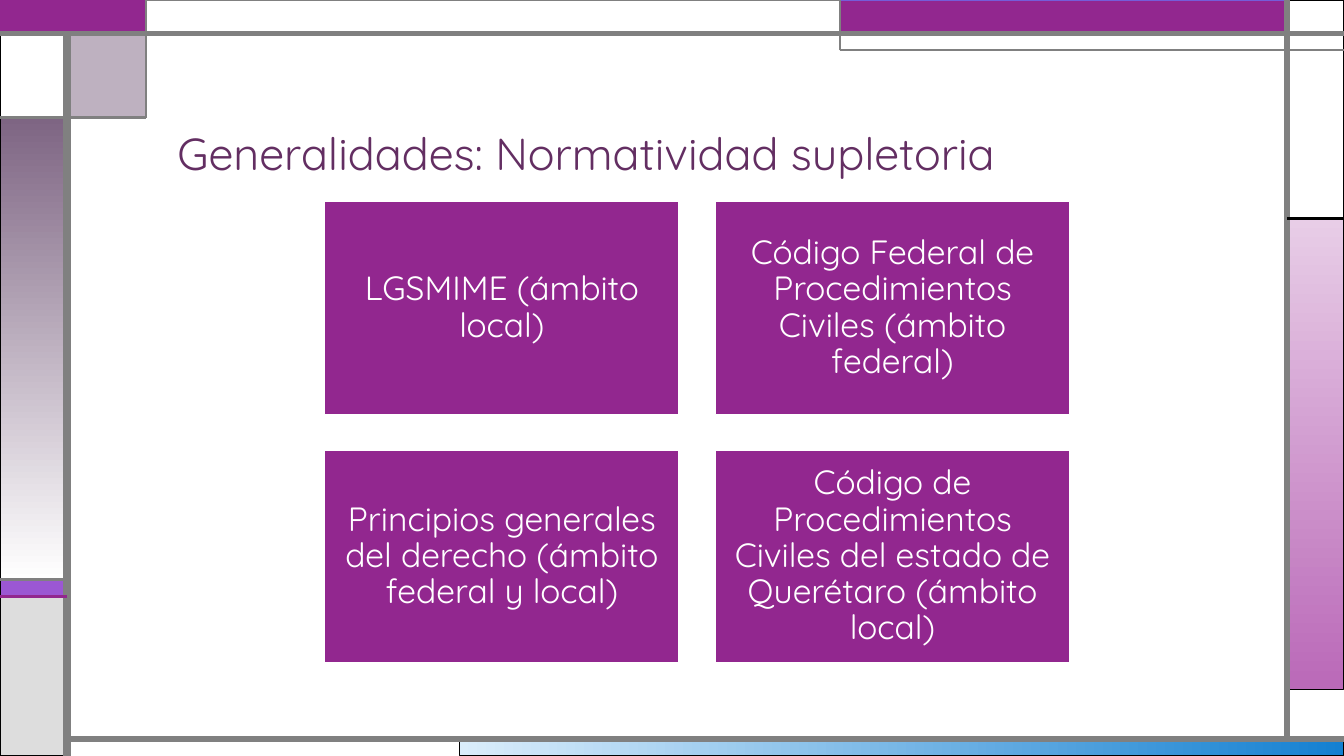
from lxml import etree
from pptx import Presentation
from pptx import util as u
from pptx.dml.color import RGBColor
from pptx.enum import shapes, text
from pptx.oxml.ns import qn

Pt = u.Pt
FONT = "Quicksand"
PURPLE = RGBColor(0x92, 0x27, 0x8F)
DARK_PURPLE = RGBColor(0x63, 0x2E, 0x62)
MAUVE = RGBColor(0x7E, 0x65, 0x83)
VIOLET = RGBColor(0x9B, 0x57, 0xD3)
BLUE_VIOLET = RGBColor(0x75, 0x5D, 0xD9)
PALE_PINK = RGBColor(0xE8, 0xCD, 0xE7)
PINK = RGBColor(0xBA, 0x69, 0xB8)
PALE_BLUE = RGBColor(0xDA, 0xED, 0xFB)
BLUE = RGBColor(0x14, 0x80, 0xD1)
SILVER = RGBColor(0xDD, 0xDD, 0xDD)
GRAY = RGBColor(0x80, 0x80, 0x80)
BLACK = RGBColor(0, 0, 0)
WHITE = RGBColor(0xFF, 0xFF, 0xFF)

# Frame grid
WIDTH, HEIGHT = 960, 540
LEFT, RIGHT = 48, 919.5
TOP, BOTTOM = 24, 528
CORNER_X, CORNER_Y = 104, 84
TAB_X, TAB_Y = 600, 36
BAND_TOP, BAND_BOTTOM = 414, 426
SIDE_TOP, SIDE_BOTTOM = 156, 492.5

presentation = Presentation()
presentation.slide_width, presentation.slide_height = Pt(WIDTH), Pt(HEIGHT)
slide = presentation.slides.add_slide(presentation.slide_layouts[5])


def add_rectangle(left, top, right, bottom, colors, line_color, line_width, angle=0):
    """Draw a rectangle; two colours make a gradient."""
    shape = slide.shapes.add_shape(
        shapes.MSO_SHAPE.RECTANGLE, Pt(left), Pt(top), Pt(right - left), Pt(bottom - top))
    shape.shadow.inherit = False
    if len(colors) == 2:
        shape.fill.gradient()
        shape.fill.gradient_angle = angle
        for stop, color in zip(shape.fill.gradient_stops, colors):
            stop.color.rgb = color
    else:
        shape.fill.solid()
        shape.fill.fore_color.rgb = colors[0]
    shape.line.color.rgb = line_color
    shape.line.width = Pt(line_width)
    return shape


def add_text(paragraph, words, size, color):
    paragraph.line_spacing = 0.9
    run = paragraph.add_run()
    run.text = words
    run.font.name = FONT
    run.font.size = Pt(size)
    run.font.color.rgb = color


# Frame panels
add_rectangle(328, BOTTOM, WIDTH, HEIGHT, [PALE_BLUE, BLUE], BLACK, 0.75)
add_rectangle(RIGHT, SIDE_TOP, WIDTH, SIDE_BOTTOM, [PALE_PINK, PINK], BLACK, 0.75, 270)
add_rectangle(0, BAND_TOP, LEFT, BAND_BOTTOM, [VIOLET], BLACK, 0.75)
add_rectangle(0, BAND_BOTTOM, LEFT, HEIGHT, [SILVER], BLACK, 0.75)
add_rectangle(RIGHT, 0, WIDTH, SIDE_TOP, [WHITE], BLACK, 0.75)
add_rectangle(TAB_X, 0, RIGHT, TOP, [PURPLE], BLUE_VIOLET, 0.75)
corner = add_rectangle(LEFT, TOP, CORNER_X, CORNER_Y, [MAUVE], BLACK, 0.75)
corner_color = corner.fill._xPr.find(qn("a:solidFill"))[0]
etree.SubElement(corner_color, qn("a:alpha"), val="50000")
add_rectangle(0, CORNER_Y, LEFT, BAND_TOP, [MAUVE, WHITE], BLACK, 0.75, 270)
add_rectangle(0, TOP, LEFT, CORNER_Y, [WHITE], BLACK, 0.75)
add_rectangle(0, 0, CORNER_X, TOP, [PURPLE], PURPLE, 1.5)
add_rectangle(CORNER_X, 0, TAB_X, TOP, [WHITE], GRAY, 0.75)

# Frame lines
frame_lines = [
    (LEFT, HEIGHT, LEFT, TOP, GRAY, 6),
    (LEFT, BOTTOM, WIDTH, BOTTOM, GRAY, 4.5),
    (RIGHT, BOTTOM, RIGHT, 0, GRAY, 4.5),
    (0, TOP, WIDTH, TOP, GRAY, 3),
    (WIDTH, TAB_Y, TAB_X, TAB_Y, GRAY, 1.5),
    (TAB_X, TAB_Y, TAB_X, 0, GRAY, 1.5),
    (RIGHT, SIDE_TOP, WIDTH, SIDE_TOP, BLACK, 2.25),
    (CORNER_X, 0, CORNER_X, CORNER_Y, GRAY, 1.5),
    (CORNER_X, CORNER_Y, 0, CORNER_Y, GRAY, 2.25),
    (LEFT, BAND_TOP, 0, BAND_TOP, GRAY, 2.25),
    (LEFT, BAND_BOTTOM, 0, BAND_BOTTOM, PURPLE, 2.25),
]
for begin_x, begin_y, end_x, end_y, color, width in frame_lines:
    connector = slide.shapes.add_connector(
        shapes.MSO_CONNECTOR.STRAIGHT, Pt(begin_x), Pt(begin_y), Pt(end_x), Pt(end_y))
    connector.line.color.rgb = color
    connector.line.width = Pt(width)
    etree.SubElement(connector._element.spPr, qn("a:effectLst"))

# Title
title = slide.shapes.title
title.left, title.top, title.width, title.height = Pt(119.5), Pt(42), Pt(756), Pt(90)
title.text_frame.auto_size = text.MSO_AUTO_SIZE.NONE
title.text_frame.vertical_anchor = text.MSO_ANCHOR.BOTTOM
title_paragraph = title.text_frame.paragraphs[0]
title_paragraph.alignment = text.PP_ALIGN.LEFT
add_text(title_paragraph, "Generalidades: Normatividad supletoria", 32, DARK_PURPLE)

# Two by two grid of supplementary laws
BOX_WIDTH, BOX_HEIGHT = 253, 152
STEP_X, STEP_Y = 279, 177.5
laws = [
    "LGSMIME (ámbito local)",
    "Código Federal de Procedimientos Civiles (ámbito federal)",
    "Principios generales del derecho (ámbito federal y local)",
    "Código de Procedimientos Civiles del estado de Querétaro (ámbito local)",
]
for index, law in enumerate(laws):
    row, column = divmod(index, 2)
    left, top = 232 + column * STEP_X, 144 + row * STEP_Y
    box = add_rectangle(left, top, left + BOX_WIDTH, top + BOX_HEIGHT, [PURPLE], WHITE, 1)
    frame = box.text_frame
    frame.word_wrap = True
    frame.vertical_anchor = text.MSO_ANCHOR.MIDDLE
    frame.margin_left = frame.margin_right = frame.margin_top = frame.margin_bottom = Pt(7.2)
    frame.paragraphs[0].alignment = text.PP_ALIGN.CENTER
    add_text(frame.paragraphs[0], law, 24, WHITE)

presentation.save("out.pptx")
